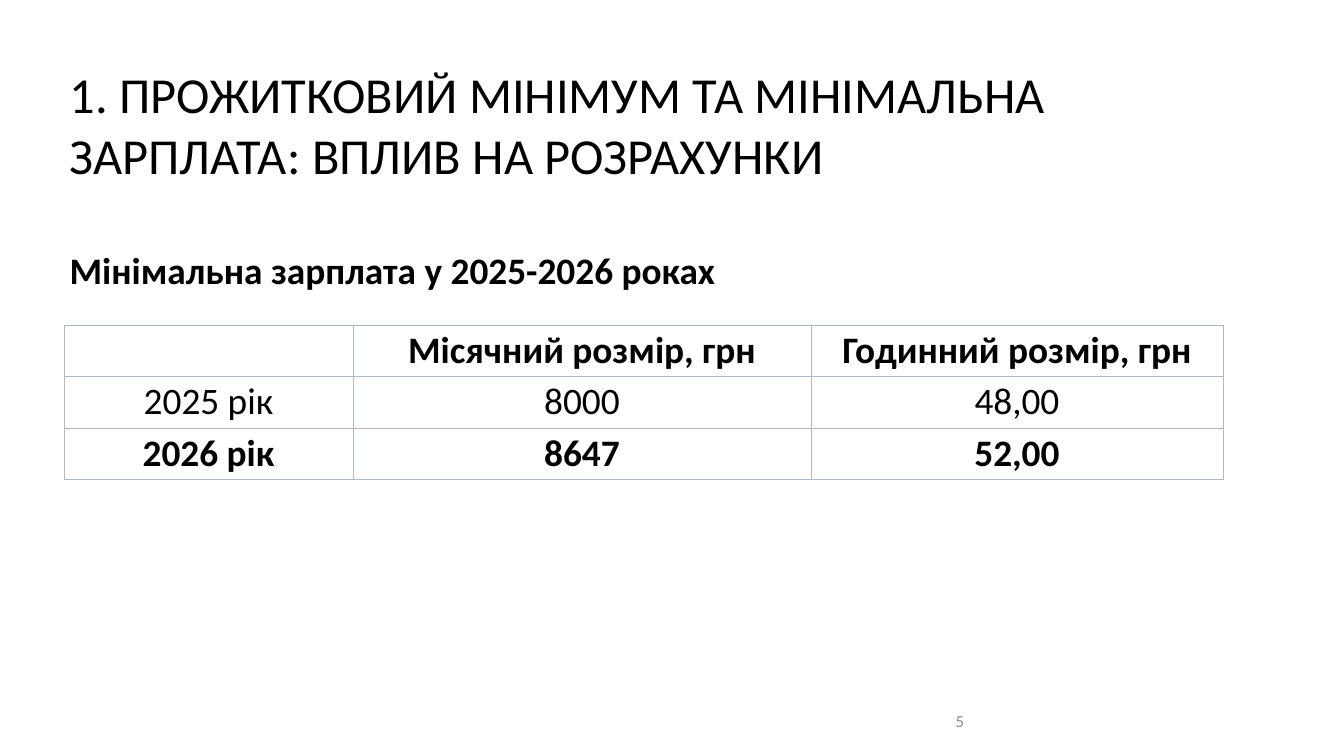
from dataclasses import dataclass

from lxml import etree
from pptx import Presentation
from pptx.dml.color import RGBColor
from pptx.enum.text import MSO_ANCHOR, MSO_AUTO_SIZE, PP_ALIGN
from pptx.oxml.ns import qn
from pptx.util import Emu, Pt

LEFT, CENTER = PP_ALIGN.LEFT, PP_ALIGN.CENTER
TOP, MIDDLE = MSO_ANCHOR.TOP, MSO_ANCHOR.MIDDLE
NO_AUTOFIT = MSO_AUTO_SIZE.NONE
TITLE_ONLY = 5
PX_PER_INCH = 67.2


@dataclass(frozen=True)
class Theme:
    font: str = "Calibri"
    ink: str = "000000"
    muted: str = "8C8C8C"
    paper: str = "FFFFFF"
    border: str = "ADB9CA"
    border_width: int = 1
    title_size: int = 54
    text_size: int = 40
    number_size: int = 18


def px(length):
    return Emu(round(length * 914400 / PX_PER_INCH))


def write_text(frame, text, *, font, size, color, bold=False, align=LEFT):
    paragraph = frame.paragraphs[0]
    paragraph.alignment = align
    run = paragraph.add_run()
    run.text = text
    run.font.name = font
    run.font.size = Pt(size)
    run.font.bold = bold
    run.font.color.rgb = RGBColor.from_string(color)


class SlideBuilder:
    def __init__(self, slide, theme):
        self.slide = slide
        self.theme = theme

    def background(self):
        fill = self.slide.background.fill
        fill.solid()
        fill.fore_color.rgb = RGBColor.from_string(self.theme.paper)

    def fill_frame(self, shape, text, size, color, bold, anchor):
        frame = shape.text_frame
        frame.word_wrap = True
        frame.auto_size = NO_AUTOFIT
        frame.vertical_anchor = anchor
        write_text(frame, text, font=self.theme.font, size=size, color=color, bold=bold)

    def title(self, text, left, top, width, height):
        shape = self.slide.shapes.title
        shape.left, shape.top = px(left), px(top)
        shape.width, shape.height = px(width), px(height)
        self.fill_frame(shape, text, self.theme.title_size, self.theme.ink, False, TOP)

    def text(self, text, left, top, width, height, *, size, color, bold=False, anchor=TOP):
        shape = self.slide.shapes.add_textbox(px(left), px(top), px(width), px(height))
        self.fill_frame(shape, text, size, color, bold, anchor)

    def table(self, rows, left, top, column_widths, row_height, bold_rows):
        table = self.slide.shapes.add_table(
            len(rows), len(column_widths), px(left), px(top),
            px(sum(column_widths)), px(row_height * len(rows))).table
        for column, width in zip(table.columns, column_widths):
            column.width = px(width)
        for row_index, values in enumerate(rows):
            table.rows[row_index].height = px(row_height)
            for column_index, value in enumerate(values):
                self.cell(table.cell(row_index, column_index), value, row_index in bold_rows)

    def cell(self, cell, value, bold):
        cell.margin_top = cell.margin_bottom = px(3)
        cell.fill.solid()
        cell.fill.fore_color.rgb = RGBColor.from_string(self.theme.paper)
        if value:
            write_text(cell.text_frame, value, font=self.theme.font, size=self.theme.text_size,
                       color=self.theme.ink, bold=bold, align=CENTER)
        # Borders come before the fill in the cell properties
        properties = cell._tc.get_or_add_tcPr()
        for index, side in enumerate(("a:lnL", "a:lnR", "a:lnT", "a:lnB")):
            line = etree.Element(qn(side), w=str(Pt(self.theme.border_width)))
            fill = etree.SubElement(line, qn("a:solidFill"))
            etree.SubElement(fill, qn("a:srgbClr"), val=self.theme.border)
            properties.insert(index, line)


def main():
    theme = Theme()
    presentation = Presentation()
    presentation.slide_width, presentation.slide_height = px(1344), px(756)
    slide = presentation.slides.add_slide(presentation.slide_layouts[TITLE_ONLY])
    builder = SlideBuilder(slide, theme)
    builder.background()

    # Title and table heading
    builder.title("1. ПРОЖИТКОВИЙ МІНІМУМ ТА МІНІМАЛЬНА ЗАРПЛАТА: ВПЛИВ НА РОЗРАХУНКИ",
                  63, 60, 1217, 129)
    builder.text("Мінімальна зарплата у 2025-2026 роках", 63, 244, 1217, 52,
                 size=theme.text_size, color=theme.ink, bold=True)

    # Minimum wage table
    wages = [
        ("", "Місячний розмір, грн", "Годинний розмір, грн"),
        ("2025 рік", "8000", "48,00"),
        ("2026 рік", "8647", "52,00"),
    ]
    builder.table(wages, 64, 325, (289, 458, 412), 51, bold_rows=(0, 2))

    # Slide number
    builder.text("5", 949, 701, 302, 40, size=theme.number_size, color=theme.muted,
                 anchor=MIDDLE)

    presentation.save("out.pptx")


if __name__ == "__main__":
    main()
